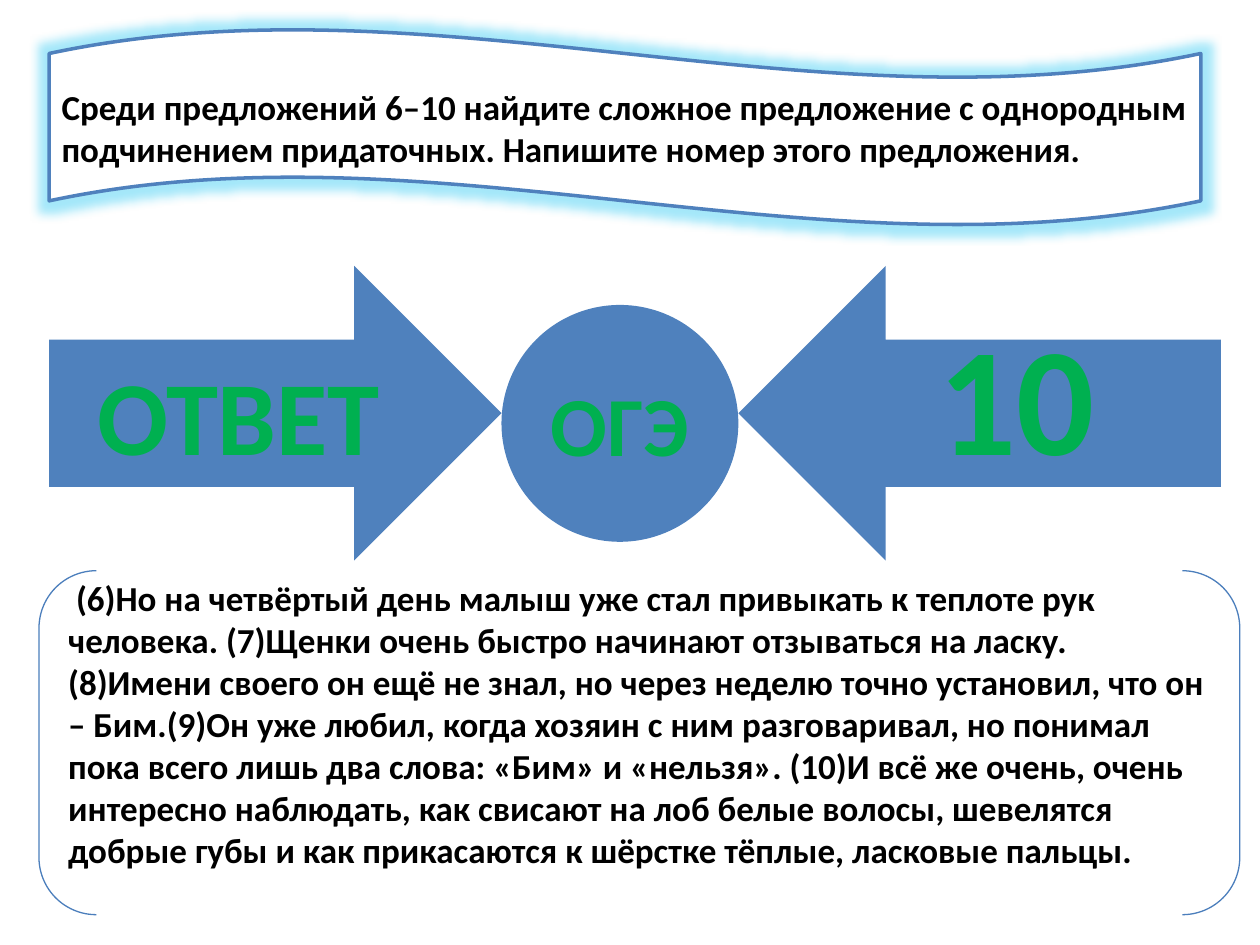
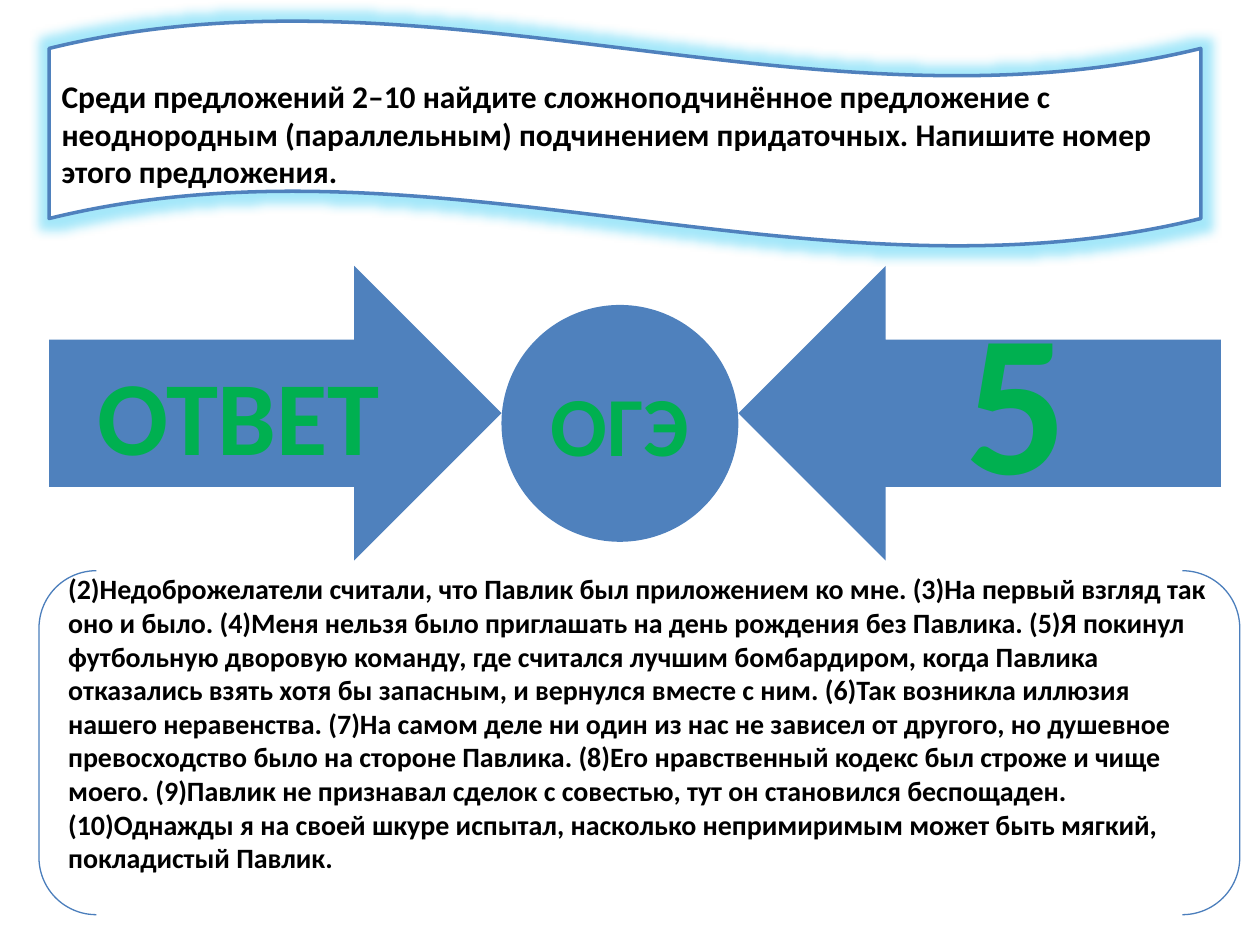
from dataclasses import dataclass
from typing import Optional

from lxml.etree import SubElement
from pptx import Presentation
from pptx.dml.color import RGBColor
from pptx.enum.shapes import MSO_SHAPE as Preset
from pptx.enum.text import MSO_ANCHOR as Anchor, PP_ALIGN as Align
from pptx.oxml.ns import qn
from pptx.util import Inches, Pt

WHITE = RGBColor(0xFF, 0xFF, 0xFF)
BLACK = RGBColor(0x00, 0x00, 0x00)
BLUE = RGBColor(0x4F, 0x81, 0xBD)
BRACKET_BLUE = RGBColor(0x4B, 0x7E, 0xBC)
GREEN = RGBColor(0x00, 0xB0, 0x50)
GLOW_CYAN = RGBColor(0x1E, 0xC5, 0xF2)

BODY_FONT = {"name": "Calibri", "bold": True}
GLOW_RADIUS = Inches(0.15)
GLOW_ALPHA = "40000"
LIFTED = 0.36  # bottom inset that raises the text above the middle


@dataclass(frozen=True)
class Part:
    preset: Preset
    left: float
    top: float
    width: float
    height: float
    fill: Optional[RGBColor] = BLUE
    line: Optional[RGBColor] = None
    line_width: float = 0
    text_color: RGBColor = GREEN
    align: Align = Align.CENTER
    bottom_inset: float = 0.05
    glow: bool = False


@dataclass(frozen=True)
class Task:
    question: str
    question_size: int
    banner_top: float
    banner_height: float
    answer: str
    answer_size: int
    passage: tuple[str, ...]
    passage_size: int


# Parts that stay in the same place on every slide
ANSWER_LABEL = Part(Preset.RIGHT_ARROW, 0.39, 2.11, 3.59, 2.34)
ANSWER = Part(Preset.LEFT_ARROW, 5.86, 2.11, 3.83, 2.34, bottom_inset=LIFTED)
EXAM = Part(Preset.OVAL, 3.98, 2.42, 1.88, 1.88)
PASSAGE = Part(Preset.DOUBLE_BRACKET, 0.31, 4.53, 9.53, 2.73, fill=None,
               line=BRACKET_BLUE, line_width=0.75, text_color=BLACK,
               align=Align.LEFT, bottom_inset=LIFTED)

TASKS = (
    Task(
        "Среди предложений 6–10 найдите сложное предложение с однородным "
        "подчинением придаточных. Напишите номер этого предложения.",
        20, 0.23, 1.56, "10", 88,
        (" (6)Но на четвёртый день малыш уже стал привыкать к теплоте рук "
         "человека. (7)Щенки очень быстро начинают отзываться на ласку. "
         "(8)Имени своего он ещё не знал, но через неделю точно установил, "
         "что он – Бим.(9)Он уже любил, когда хозяин с ним разговаривал, но "
         "понимал пока всего лишь два слова: «Бим» и «нельзя». (10)И всё же "
         "очень, очень интересно наблюдать, как свисают на лоб белые волосы, "
         "шевелятся добрые губы и как прикасаются к шёрстке тёплые, ласковые "
         "пальцы.",),
        20,
    ),
    Task(
        "Среди предложений 2–10 найдите сложноподчинённое предложение с "
        "неоднородным (параллельным) подчинением придаточных. Напишите номер "
        "этого предложения.",
        18, 0.16, 1.8, "5", 115,
        ("(2)Недоброжелатели считали, что Павлик был приложением ко мне. "
         "(3)На первый взгляд так оно и было. (4)Меня нельзя было приглашать "
         "на день рождения без Павлика. (5)Я покинул футбольную дворовую "
         "команду, где считался лучшим бомбардиром, когда Павлика отказались "
         "взять хотя бы запасным, и вернулся вместе с ним. (6)Так возникла "
         "иллюзия нашего неравенства. (7)На самом деле ни один из нас не "
         "зависел от другого, но душевное превосходство было на стороне "
         "Павлика. (8)Его нравственный кодекс был строже и чище моего. "
         "(9)Павлик не признавал сделок с совестью, тут он становился "
         "беспощаден.",
         "(10)Однажды я на своей шкуре испытал, насколько непримиримым может "
         "быть мягкий, покладистый Павлик."),
        16,
    ),
)


def set_all(target, values: dict) -> None:
    for attribute, value in values.items():
        setattr(target, attribute, value)


def add_glow(shape) -> None:
    effects = shape._element.spPr.find(qn("a:effectLst"))
    glow = SubElement(effects, qn("a:glow"), rad=str(int(GLOW_RADIUS)))
    color = SubElement(glow, qn("a:srgbClr"), val=str(GLOW_CYAN))
    SubElement(color, qn("a:alpha"), val=GLOW_ALPHA)


def draw_part(slide, part: Part, paragraphs: tuple[str, ...], size: int) -> None:
    shape = slide.shapes.add_shape(
        part.preset, Inches(part.left), Inches(part.top),
        Inches(part.width), Inches(part.height))
    shape.shadow.inherit = False
    if part.glow:
        add_glow(shape)

    # Fill and outline
    if part.fill is None:
        shape.fill.background()
    else:
        shape.fill.solid()
        shape.fill.fore_color.rgb = part.fill
    if part.line is None:
        shape.line.fill.background()
    else:
        shape.line.color.rgb = part.line
        shape.line.width = Pt(part.line_width)

    # Text
    frame = shape.text_frame
    set_all(frame, {"word_wrap": True, "vertical_anchor": Anchor.MIDDLE,
                    "margin_bottom": Inches(part.bottom_inset)})
    for index, text in enumerate(paragraphs):
        paragraph = frame.add_paragraph() if index else frame.paragraphs[0]
        paragraph.alignment = part.align
        run = paragraph.add_run()
        run.text = text
        set_all(run.font, {**BODY_FONT, "size": Pt(size)})
        run.font.color.rgb = part.text_color


def build_slide(deck, task: Task) -> None:
    slide = deck.slides.add_slide(deck.slide_layouts[6])
    banner = Part(Preset.WAVE, 0.39, task.banner_top, 9.14, task.banner_height,
                  fill=WHITE, line=BLUE, line_width=2, text_color=BLACK,
                  align=Align.LEFT, glow=True)
    draw_part(slide, banner, (task.question,), task.question_size)
    draw_part(slide, ANSWER_LABEL, ("ОТВЕТ",), 60)
    draw_part(slide, ANSWER, (task.answer,), task.answer_size)
    draw_part(slide, EXAM, ("ОГЭ",), 48)
    draw_part(slide, PASSAGE, task.passage, task.passage_size)


def main() -> None:
    deck = Presentation()
    set_all(deck, {"slide_width": Inches(10), "slide_height": Inches(7.5)})
    for task in TASKS:
        build_slide(deck, task)
    deck.save("out.pptx")


if __name__ == "__main__":
    main()
